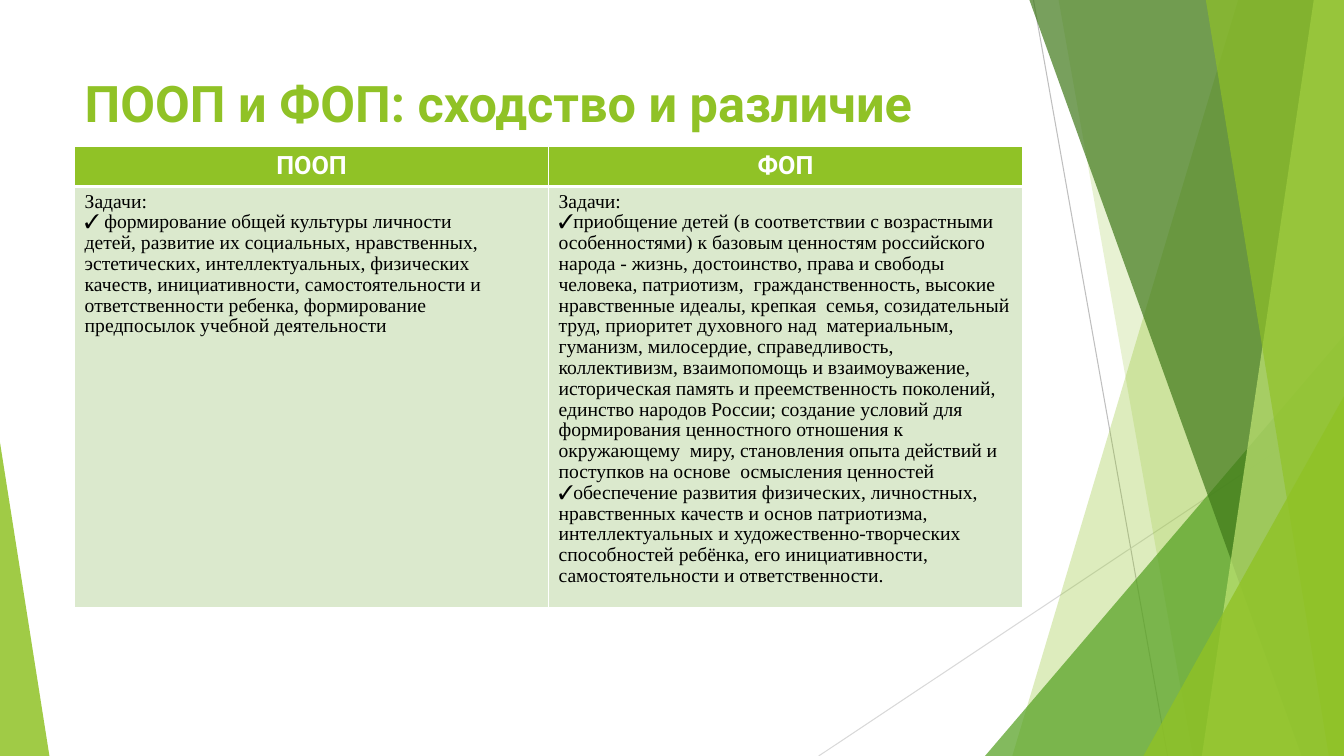
from dataclasses import dataclass

from lxml import etree
from pptx import Presentation
from pptx.dml.color import RGBColor
from pptx.enum import shapes, text
from pptx.oxml import ns
from pptx.util import Inches, Pt

WIDTH, HEIGHT = 13.33, 7.5
COLORS = {
    "lime": "90C226", "green": "54A021", "forest": "3F7819", "pale": "C0E474",
    "mint": "DBE9CD", "white": "FFFFFF", "black": "000000",
    "gray": "BFBFBF", "silver": "D9D9D9",
}

HEADERS = ["ПООП", "ФОП"]
TASKS = [
    [
        "Задачи:",
        "✓ формирование общей культуры личности",
        "детей, развитие их социальных, нравственных,",
        "эстетических, интеллектуальных, физических",
        "качеств, инициативности, самостоятельности и",
        "ответственности ребенка, формирование",
        "предпосылок учебной деятельности",
    ],
    [
        "Задачи:",
        "✓приобщение детей (в соответствии с возрастными",
        "особенностями) к базовым ценностям российского народа - жизнь, "
        "достоинство, права и свободы человека, патриотизм,  гражданственность, "
        "высокие нравственные идеалы, крепкая  семья, созидательный труд, "
        "приоритет духовного над  материальным, гуманизм, милосердие, "
        "справедливость, коллективизм, взаимопомощь и взаимоуважение,",
        "историческая память и преемственность поколений,",
        "единство народов России; создание условий для",
        "формирования ценностного отношения к окружающему  миру, становления "
        "опыта действий и поступков на основе  осмысления ценностей",
        "✓обеспечение развития физических, личностных,",
        "нравственных качеств и основ патриотизма,",
        "интеллектуальных и художественно-творческих",
        "способностей ребёнка, его инициативности,",
        "самостоятельности и ответственности.",
    ],
]


@dataclass
class Ray:
    """A thin line."""
    start: tuple[float, float]
    end: tuple[float, float]
    color: str


@dataclass
class Band:
    """A panel on the right edge with a slanted left side."""
    top_x: float
    bottom_x: float
    color: str
    alpha: int


@dataclass
class Wedge:
    """A right triangle on the bottom edge; apex 0 is left, 1 is right."""
    left: float
    top: float
    width: float
    apex: int
    color: str
    alpha: int


@dataclass
class Style:
    size: float
    font: str
    color: str
    bold: bool


DECOR = [
    Ray((10.25, 0), (11.58, HEIGHT), "gray"),
    Ray((WIDTH, 4.03), (8.12, HEIGHT), "silver"),
    Band(12.28, 10.04, "lime", 30),
    Band(10.5, 11.83, "lime", 20),
    Wedge(9.77, 3.33, 3.56, 1, "green", 72),
    Band(10.21, 12.91, "forest", 70),
    Band(13.03, 11.92, "pale", 70),
    Band(11.96, 13.18, "lime", 65),
    Wedge(11.34, 3.93, 1.99, 1, "lime", 80),
    Wedge(0, 4.39, 0.49, 0, "lime", 85),
]
TITLE_STYLE = Style(36, "Roboto", "lime", True)
HEADER_STYLE = Style(18, "Roboto", "white", True)
BODY_STYLE = Style(14, "Times New Roman", "black", False)


def rgb(name: str) -> RGBColor:
    return RGBColor.from_string(COLORS[name])


def paint(shape, color: str, alpha: int) -> None:
    shape.shadow.inherit = False
    shape.line.fill.background()
    shape.fill.solid()
    shape.fill.fore_color.rgb = rgb(color)
    tone = shape.fill._xPr.find(".//" + ns.qn("a:srgbClr"))
    etree.SubElement(tone, ns.qn("a:alpha"), val=str(alpha * 1000))


def draw_ray(page, ray: Ray) -> None:
    points = [Inches(value) for value in ray.start + ray.end]
    line = page.shapes.add_connector(shapes.MSO_CONNECTOR.STRAIGHT, *points)
    line.line.color.rgb = rgb(ray.color)
    line.line.width = Pt(0.75)
    etree.SubElement(line._element.spPr, ns.qn("a:effectLst"))


def draw_band(page, band: Band) -> None:
    builder = page.shapes.build_freeform(Inches(band.top_x), 0)
    corners = [(WIDTH, 0), (WIDTH, HEIGHT), (band.bottom_x, HEIGHT)]
    builder.add_line_segments([(Inches(x), Inches(y)) for x, y in corners], close=True)
    paint(builder.convert_to_shape(), band.color, band.alpha)


def draw_wedge(page, wedge: Wedge) -> None:
    triangle = page.shapes.add_shape(
        shapes.MSO_SHAPE.ISOSCELES_TRIANGLE, Inches(wedge.left), Inches(wedge.top),
        Inches(wedge.width), Inches(HEIGHT - wedge.top))
    triangle.adjustments[0] = wedge.apex
    paint(triangle, wedge.color, wedge.alpha)


def write(frame, lines: list[str], style: Style, align, spacing: float = 1.0) -> None:
    for index, line in enumerate(lines):
        para = frame.add_paragraph() if index else frame.paragraphs[0]
        para.alignment = align
        para.line_spacing = spacing
        span = para.add_run()
        span.text = line
        span.font.size = Pt(style.size)
        span.font.name = style.font
        span.font.bold = style.bold
        span.font.color.rgb = rgb(style.color)


def dress_cell(cell, fill: str, top: float, bottom: float) -> None:
    cell.fill.solid()
    cell.fill.fore_color.rgb = rgb(fill)
    props = cell._tc.get_or_add_tcPr()
    for index, (side, points) in enumerate(zip("LRTB", (1, 1, top, bottom))):
        border = etree.Element(ns.qn(f"a:ln{side}"), w=str(Pt(points)))
        solid = etree.SubElement(border, ns.qn("a:solidFill"))
        etree.SubElement(solid, ns.qn("a:srgbClr"), val=COLORS["white"])
        props.insert(index, border)


def draw_table(page) -> None:
    heights = [0.4, 4.18]
    table = page.shapes.add_table(
        2, 2, Inches(0.74), Inches(1.45), Inches(9.4), Inches(sum(heights))).table
    for row, height in zip(table.rows, heights):
        row.height = Inches(height)
    for column, (header, tasks) in enumerate(zip(HEADERS, TASKS)):
        head, body = table.cell(0, column), table.cell(1, column)
        dress_cell(head, "lime", 1, 3)
        dress_cell(body, "mint", 3, 1)
        write(head.text_frame, [header], HEADER_STYLE, text.PP_ALIGN.CENTER)
        write(body.text_frame, tasks, BODY_STYLE, text.PP_ALIGN.LEFT, 0.96)


def main() -> None:
    deck = Presentation()
    deck.slide_width, deck.slide_height = Inches(WIDTH), Inches(HEIGHT)
    page = deck.slides.add_slide(deck.slide_layouts[5])

    # Background decoration, back to front
    painters = {Ray: draw_ray, Band: draw_band, Wedge: draw_wedge}
    for part in DECOR:
        painters[type(part)](page, part)

    # Title
    title = page.shapes.title
    title.left, title.top = Inches(0.74), Inches(0.67)
    title.width, title.height = Inches(9.4), Inches(0.87)
    title.text_frame.vertical_anchor = text.MSO_ANCHOR.TOP
    write(title.text_frame, ["ПООП и ФОП: сходство и различие"],
          TITLE_STYLE, text.PP_ALIGN.LEFT)

    # Comparison table
    draw_table(page)
    deck.save("out.pptx")


if __name__ == "__main__":
    main()
